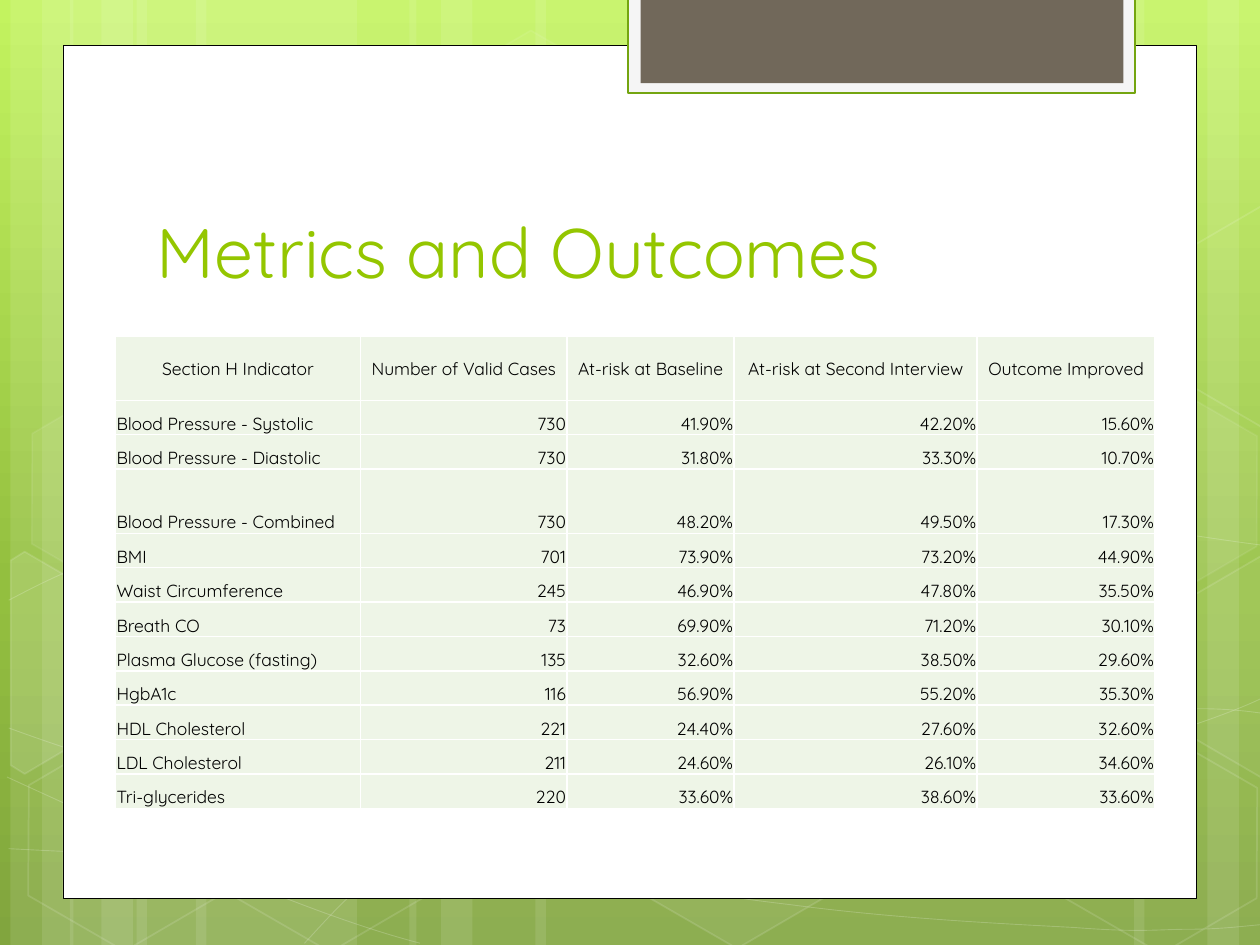
from copy import deepcopy
from math import cos, radians, sin

from lxml.etree import SubElement
from pptx import Presentation
from pptx.dml.color import RGBColor
from pptx.enum.shapes import MSO_SHAPE
from pptx.enum.text import MSO_ANCHOR, PP_ALIGN
from pptx.oxml.ns import qn
from pptx.util import Pt

# Content
TITLE = "Metrics and Outcomes"
HEADER = ["Section H Indicator", "Number of Valid Cases", "At-risk at Baseline",
          "At-risk at Second Interview", "Outcome Improved"]
INDICATORS = [
    ("Blood Pressure - Systolic", "730", "41.90%", "42.20%", "15.60%"),
    ("Blood Pressure - Diastolic", "730", "31.80%", "33.30%", "10.70%"),
    ("Blood Pressure - Combined", "730", "48.20%", "49.50%", "17.30%"),
    ("BMI", "701", "73.90%", "73.20%", "44.90%"),
    ("Waist Circumference", "245", "46.90%", "47.80%", "35.50%"),
    ("Breath CO", "73", "69.90%", "71.20%", "30.10%"),
    ("Plasma Glucose (fasting)", "135", "32.60%", "38.50%", "29.60%"),
    ("HgbA1c", "116", "56.90%", "55.20%", "35.30%"),
    ("HDL Cholesterol", "221", "24.40%", "27.60%", "32.60%"),
    ("LDL Cholesterol", "211", "24.60%", "26.10%", "34.60%"),
    ("Tri-glycerides", "220", "33.60%", "38.60%", "33.60%"),
]
COLUMN_WIDTHS = [140, 118, 95.5, 139, 101.5]
ROW_HEIGHT, TALL_ROW_HEIGHT = 19.65, 36.75
TALL_ROWS = (0, 3)

# Look
FONT = "Quicksand"
WHITE = RGBColor(0xFF, 0xFF, 0xFF)
BLACK = RGBColor(0x00, 0x00, 0x00)
LIME = RGBColor(0x94, 0xC6, 0x00)
CELL_GREEN = RGBColor(0xEE, 0xF5, 0xE7)
TAB_FRAME = RGBColor(0xF5, 0xF5, 0xF5)
TAB_LINE = RGBColor(0x74, 0xA5, 0x10)
TAB_BROWN = RGBColor(0x71, 0x68, 0x5A)
GRADIENT = [(0, RGBColor(0xC3, 0xF3, 0x5F)), (0.62, RGBColor(0x93, 0xBF, 0x3F)),
            (1, RGBColor(0x81, 0xA5, 0x3E))]
SLIDE_WIDTH, SLIDE_HEIGHT = 720, 540
TILT = 30

# Background decoration: (left, width) of stripes
STRIPES = [(78, 126), (6, 36), (24, 60), (112, 126), (40, 36), (58, 60),
           (528, 126), (690, 36), (648, 60), (306, 222), (234, 36), (252, 60)]
# Start point, then cubic segments of two control points and an end point
CURVES = [
    [(5, 485), (44, 487), (83, 489), (137, 488), (191, 487), (258, 486), (330, 479),
     (402, 472), (504, 458), (570, 444), (636, 431), (703, 409), (725, 397)],
    [(5, 343), (26, 332), (47, 321), (87, 310), (128, 300), (186, 284), (250, 279),
     (314, 274), (392, 273), (471, 279), (550, 284), (682, 307), (725, 312)],
    [(4, 444), (91, 484), (178, 523), (240, 539)],
    [(5, 416), (27, 424), (50, 432), (92, 444), (134, 454), (197, 472), (257, 485),
     (317, 497), (392, 510), (452, 517), (512, 525), (576, 528), (614, 530),
     (652, 533), (662, 531), (680, 531), (699, 531), (712, 529), (725, 528)],
    [(174, 539), (187, 525), (200, 510), (217, 498), (235, 485), (259, 470), (279, 460),
     (300, 450), (312, 446), (338, 438), (364, 431), (413, 421), (438, 416),
     (464, 411), (467, 411), (490, 410), (512, 408), (547, 405), (572, 405),
     (597, 404), (638, 405), (638, 405), (654, 405), (670, 405), (686, 405),
     (699, 405), (711, 406), (724, 408)],
]
# left, top, fill opacity (0 = none), line opacity, in percent
HEXAGONS = [(240.5, 26, 4, 8), (358, 424, 6, 12), (8, 425.5, 0, 12), (10, 224.5, 7, 8),
            (125.5, 426, 0, 12), (542, 326, 10, 12), (600.5, 427, 0, 12), (600.5, 226, 7, 8)]
# centre of rotation, corners as seen, fill opacity, line opacity
CUT_HEXAGONS = [
    ((26, 385), [(6, 320), (14, 315), (69, 347), (68, 410), (14, 442), (6, 437)], 10, 12),
    ((709, 374.5), [(667, 349), (721, 317.5), (726, 321), (726, 441), (721, 444),
                    (667, 412.5)], 4, 12),
    ((709, 173.5), [(667, 149), (721, 117.5), (727, 121), (726, 241), (721, 244),
                    (667, 212.5)], 0, 12),
]


def set_opacity(color_parent, percent):
    color = color_parent.find(qn("a:solidFill")).find(qn("a:srgbClr"))
    SubElement(color, qn("a:alpha"), val=str(percent * 1000))


def paint(shape, fill=None, fill_opacity=100, line=None, line_width=1, line_opacity=100):
    shape.shadow.inherit = False
    properties = shape.element.spPr
    if fill is None or fill_opacity == 0:
        shape.fill.background()
    else:
        shape.fill.solid()
        shape.fill.fore_color.rgb = fill
        if fill_opacity < 100:
            set_opacity(properties, fill_opacity)
    if line is None:
        shape.line.fill.background()
    else:
        shape.line.color.rgb = line
        shape.line.width = Pt(line_width)
        if line_opacity < 100:
            set_opacity(properties.find(qn("a:ln")), line_opacity)


def add_preset(slide, kind, left, top, width, height, **look):
    shape = slide.shapes.add_shape(kind, Pt(left), Pt(top), Pt(width), Pt(height))
    paint(shape, **look)
    return shape


def add_outline(slide, points, close, **look):
    corners = [(Pt(x), Pt(y)) for x, y in points]
    builder = slide.shapes.build_freeform(*corners[0])
    builder.add_line_segments(corners[1:], close=close)
    shape = builder.convert_to_shape()
    paint(shape, **look)
    return shape


def bend(shape):
    """Turn each three line segments into one cubic curve."""
    outline = shape.element.find(".//" + qn("a:path"))
    segments = outline.findall(qn("a:lnTo"))
    for start in range(0, len(segments), 3):
        cubic = SubElement(outline, qn("a:cubicBezTo"))
        for segment in segments[start:start + 3]:
            cubic.append(segment[0])
            outline.remove(segment)


def untilt(point, center):
    angle = radians(TILT)
    x, y = point[0] - center[0], point[1] - center[1]
    return (center[0] + x * cos(angle) + y * sin(angle),
            center[1] - x * sin(angle) + y * cos(angle))


def add_background(slide):
    fill = slide.background.fill
    fill.gradient()
    fill.gradient_angle = 270
    stop_list = slide.element.find(".//" + qn("a:gsLst"))
    stop_list.append(deepcopy(stop_list[-1]))
    for stop, (position, color) in zip(fill.gradient_stops, GRADIENT):
        stop.position = position
        stop.color.rgb = color

    for left, width in STRIPES:
        add_preset(slide, MSO_SHAPE.RECTANGLE, left, 0, width, SLIDE_HEIGHT,
                   fill=WHITE, fill_opacity=10)
    for curve in CURVES:
        bend(add_outline(slide, curve, False, line=WHITE, line_width=0.5, line_opacity=20))
    for left, top, fill_opacity, line_opacity in HEXAGONS:
        hexagon = add_preset(slide, MSO_SHAPE.HEXAGON, left, top, 126, 109.5, fill=WHITE,
                             fill_opacity=fill_opacity, line=WHITE, line_opacity=line_opacity)
        hexagon.adjustments[0] = 0.285
        hexagon.rotation = TILT
    for center, corners, fill_opacity, line_opacity in CUT_HEXAGONS:
        cut_hexagon = add_outline(slide, [untilt(corner, center) for corner in corners], True,
                                  fill=WHITE, fill_opacity=fill_opacity,
                                  line=WHITE, line_opacity=line_opacity)
        cut_hexagon.rotation = TILT


def style_paragraph(paragraph, size, color, alignment):
    paragraph.alignment = alignment
    paragraph.font.name = FONT
    paragraph.font.size = Pt(size)
    paragraph.font.color.rgb = color


def add_title(slide):
    box = slide.shapes.add_textbox(Pt(82.4), Pt(80.5), Pt(553), Pt(90))
    frame = box.text_frame
    frame.word_wrap = True
    frame.vertical_anchor = MSO_ANCHOR.BOTTOM
    frame.text = TITLE
    style_paragraph(frame.paragraphs[0], 40, LIME, PP_ALIGN.LEFT)


def style_cell(cell):
    cell.margin_left = cell.margin_right = cell.margin_top = Pt(0.6)
    cell.margin_bottom = 0
    properties = cell._tc.get_or_add_tcPr()
    for side in ("a:lnL", "a:lnR", "a:lnT", "a:lnB"):
        border = SubElement(properties, qn(side), w=str(Pt(1)))
        SubElement(SubElement(border, qn("a:solidFill")), qn("a:srgbClr"), val=str(WHITE))
    cell.fill.solid()
    cell.fill.fore_color.rgb = CELL_GREEN


def add_indicator_table(slide):
    rows = [HEADER, *INDICATORS]
    heights = [TALL_ROW_HEIGHT if i in TALL_ROWS else ROW_HEIGHT for i in range(len(rows))]
    table = slide.shapes.add_table(len(rows), len(HEADER), Pt(66), Pt(192),
                                   Pt(sum(COLUMN_WIDTHS)), Pt(sum(heights))).table
    for column, width in zip(table.columns, COLUMN_WIDTHS):
        column.width = Pt(width)
    for i, (values, height) in enumerate(zip(rows, heights)):
        table.rows[i].height = Pt(height)
        for j, value in enumerate(values):
            cell = table.cell(i, j)
            style_cell(cell)
            cell.text = value
            cell.vertical_anchor = MSO_ANCHOR.BOTTOM if i else MSO_ANCHOR.MIDDLE
            alignment = (PP_ALIGN.CENTER if i == 0 else
                         PP_ALIGN.RIGHT if j else PP_ALIGN.LEFT)
            style_paragraph(cell.text_frame.paragraphs[0], 10, BLACK, alignment)


def main():
    presentation = Presentation()
    presentation.slide_width, presentation.slide_height = Pt(SLIDE_WIDTH), Pt(SLIDE_HEIGHT)
    slide = presentation.slides.add_slide(presentation.slide_layouts[6])
    add_background(slide)
    # White page and the tab at its top
    add_preset(slide, MSO_SHAPE.RECTANGLE, 36, 26, 648, 487.2, fill=WHITE,
               line=BLACK, line_width=0.5)
    add_preset(slide, MSO_SHAPE.RECTANGLE, 359, -1.5, 289.6, 54.7, fill=TAB_FRAME,
               line=TAB_LINE, line_width=1.25)
    add_preset(slide, MSO_SHAPE.RECTANGLE, 366, -1.5, 276, 49, fill=TAB_BROWN)
    add_title(slide)
    add_indicator_table(slide)
    presentation.save("out.pptx")


if __name__ == "__main__":
    main()
